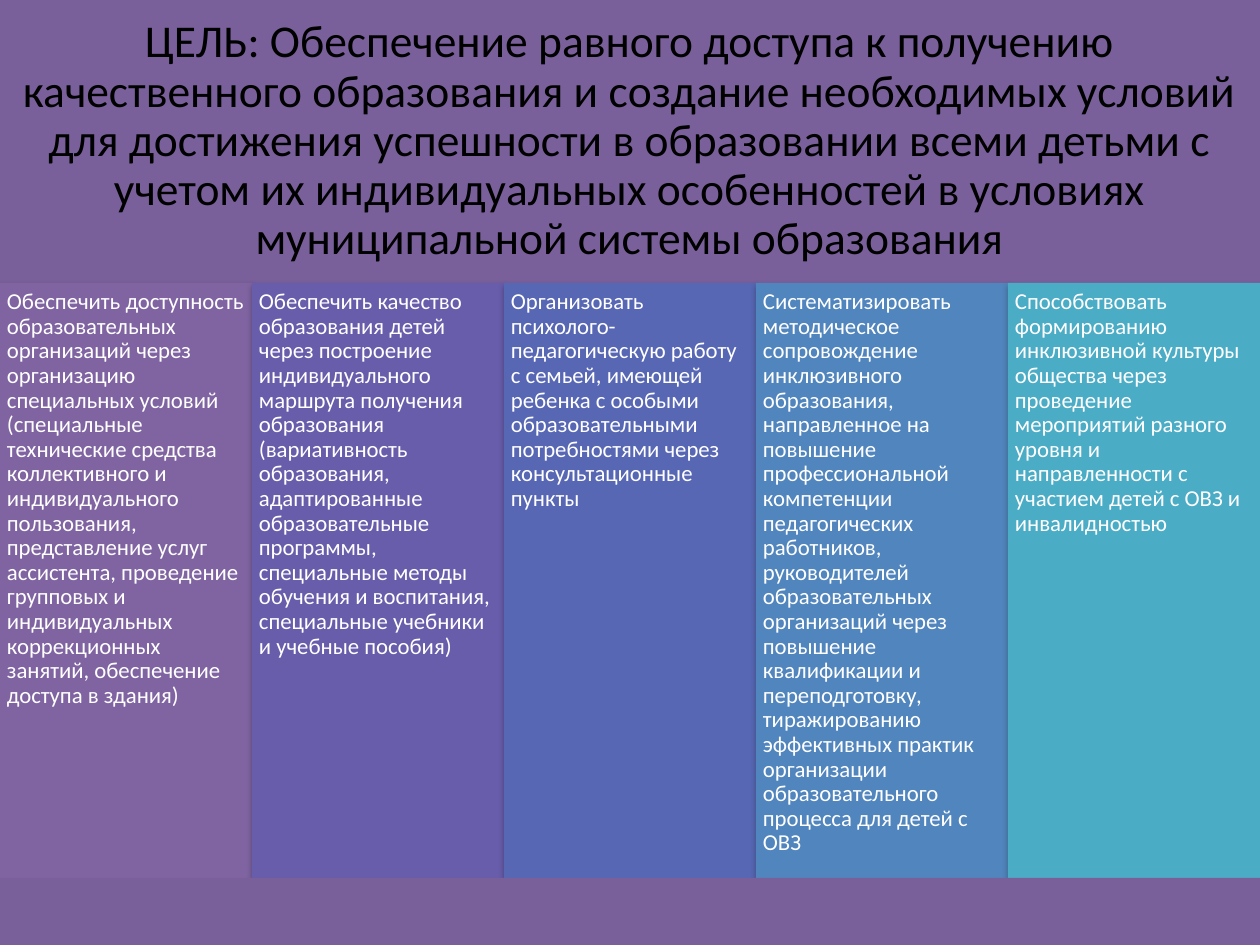
import dataclasses

import lxml.etree
import pptx
import pptx.dml.color
import pptx.enum.shapes
import pptx.enum.text
import pptx.oxml
import pptx.oxml.ns
import pptx.util

EMU_PER_PX = 914400 / 126
SLIDE_WIDTH, SLIDE_HEIGHT = 1260, 945
GOAL_HEIGHT = 283
FOOTER_TOP = 878

GOAL = (
    "ЦЕЛЬ: Обеспечение равного доступа к получению качественного образования "
    "и создание необходимых условий для достижения успешности в образовании "
    "всеми детьми с учетом их индивидуальных особенностей в условиях "
    "муниципальной системы образования"
)
TASKS = [
    ("8064A2",
     "Обеспечить доступность образовательных организаций через организацию "
     "специальных условий (специальные технические средства коллективного и "
     "индивидуального пользования, представление услуг ассистента, проведение "
     "групповых и индивидуальных коррекционных занятий, обеспечение доступа "
     "в здания)"),
    ("685DAB",
     "Обеспечить качество образования детей через построение индивидуального "
     "маршрута получения образования (вариативность образования, "
     "адаптированные образовательные программы, специальные методы обучения "
     "и воспитания, специальные учебники и учебные пособия)"),
    ("5767B4",
     "Организовать психолого-педагогическую работу с семьей, имеющей ребенка "
     "с особыми образовательными потребностями через консультационные пункты"),
    ("5185BD",
     "Систематизировать методическое сопровождение инклюзивного образования, "
     "направленное на повышение профессиональной компетенции педагогических "
     "работников, руководителей образовательных организаций через повышение "
     "квалификации и переподготовку, тиражированию эффективных практик "
     "организации образовательного процесса для детей с ОВЗ"),
    ("4BACC6",
     "Способствовать формированию инклюзивной культуры общества через "
     "проведение мероприятий разного уровня и направленности с участием "
     "детей с ОВЗ и инвалидностью"),
]


@dataclasses.dataclass(frozen=True)
class Theme:
    font: str = "Calibri"
    band: str = "7A609B"
    title_color: str = "000000"
    task_color: str = "FFFFFF"
    title_size: int = 26
    task_size: int = 13
    line_spacing: float = 0.9


def px(length):
    return pptx.util.Emu(round(length * EMU_PER_PX))


def rgb(color):
    return pptx.dml.color.RGBColor.from_string(color)


class SlideBuilder:
    def __init__(self, slide, theme):
        self.slide = slide
        self.theme = theme

    def title(self, text, width, height):
        shape = self.slide.shapes.title
        shape.left, shape.top = px(0), px(0)
        shape.width, shape.height = px(width), px(height)
        self._fill(shape, self.theme.band)
        self._write(shape, text, self.theme.title_size, self.theme.title_color,
                    14, pptx.enum.text.PP_ALIGN.CENTER,
                    pptx.enum.text.MSO_ANCHOR.MIDDLE)

    def band(self, left, top, width, height, color):
        shape = self.slide.shapes.add_shape(
            pptx.enum.shapes.MSO_SHAPE.RECTANGLE,
            px(left), px(top), px(width), px(height))
        shape.shadow.inherit = False
        shape.line.fill.background()
        self._fill(shape, color)
        return shape

    def task(self, text, left, top, width, height, color):
        shape = self.band(left, top, width, height, color)
        self._add_shadow(shape)
        self._write(shape, text, self.theme.task_size, self.theme.task_color,
                    7, pptx.enum.text.PP_ALIGN.LEFT,
                    pptx.enum.text.MSO_ANCHOR.TOP)
        # One px of slack keeps the longest line whole.
        shape.text_frame.margin_right = px(6)

    def _fill(self, shape, color):
        shape.fill.solid()
        shape.fill.fore_color.rgb = rgb(color)

    def _write(self, shape, text, size, color, inset, alignment, anchor):
        frame = shape.text_frame
        frame.word_wrap = True
        frame.auto_size = pptx.enum.text.MSO_AUTO_SIZE.NONE
        frame.vertical_anchor = anchor
        frame.margin_left = frame.margin_right = px(inset)
        frame.margin_top = frame.margin_bottom = px(inset)
        paragraph = frame.paragraphs[0]
        paragraph.text = text
        paragraph.alignment = alignment
        paragraph.line_spacing = self.theme.line_spacing
        paragraph.font.name = self.theme.font
        paragraph.font.size = pptx.util.Pt(size)
        paragraph.font.color.rgb = rgb(color)

    def _add_shadow(self, shape):
        effects = shape._element.spPr.find(pptx.oxml.ns.qn("a:effectLst"))
        effects.append(pptx.oxml.parse_xml(
            f'<a:outerShdw {pptx.oxml.ns.nsdecls("a")} blurRad="40000" '
            'dist="23000" dir="5400000" rotWithShape="0">'
            '<a:srgbClr val="000000"><a:alpha val="35000"/></a:srgbClr>'
            '</a:outerShdw>'))


def main():
    presentation = pptx.Presentation()
    presentation.slide_width = px(SLIDE_WIDTH)
    presentation.slide_height = px(SLIDE_HEIGHT)
    title_only = presentation.slide_layouts.get_by_name("Title Only")
    theme = Theme()
    builder = SlideBuilder(presentation.slides.add_slide(title_only), theme)

    builder.title(GOAL, SLIDE_WIDTH, GOAL_HEIGHT)
    column_width = SLIDE_WIDTH // len(TASKS)
    for index, (color, text) in enumerate(TASKS):
        builder.task(text, index * column_width, GOAL_HEIGHT,
                     column_width, FOOTER_TOP - GOAL_HEIGHT, color)
    builder.band(0, FOOTER_TOP, SLIDE_WIDTH, SLIDE_HEIGHT - FOOTER_TOP,
                 theme.band)
    presentation.save("out.pptx")


if __name__ == "__main__":
    main()
